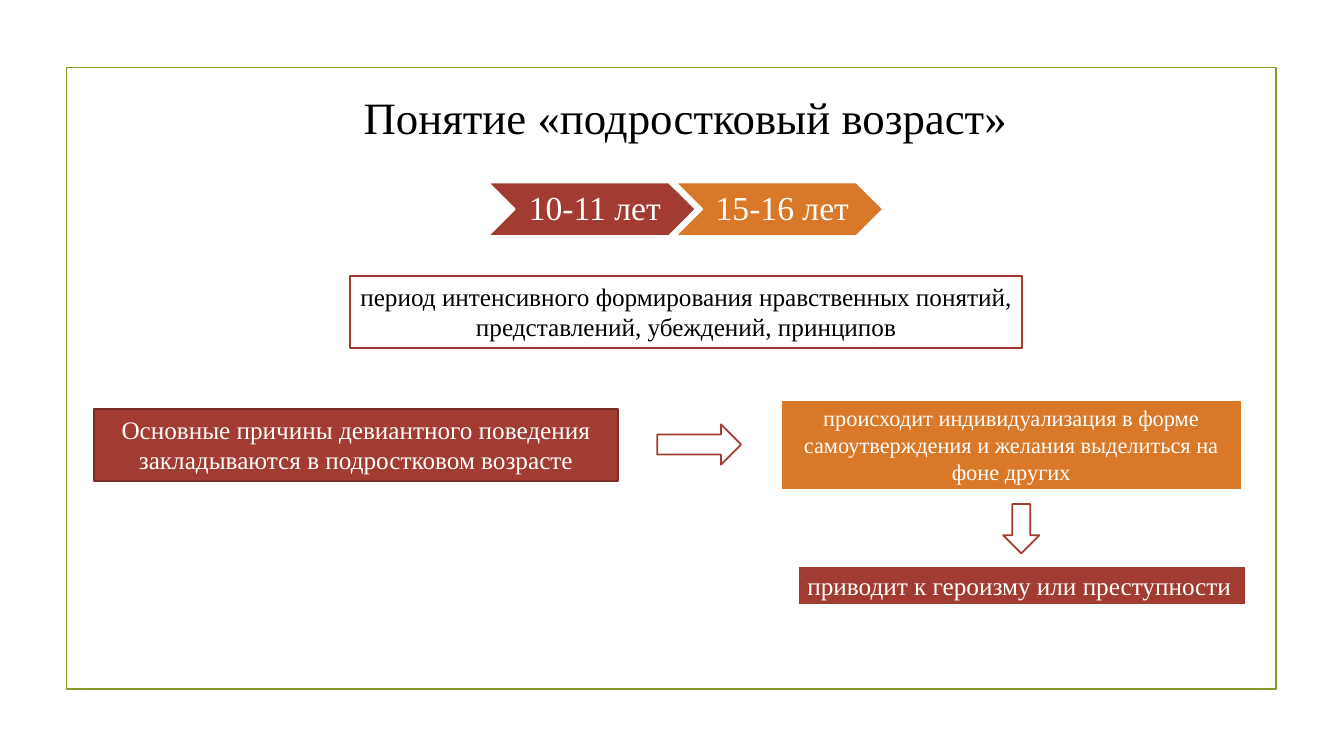
from dataclasses import dataclass
from pptx import Presentation
from pptx.dml.color import RGBColor
from pptx.enum.shapes import MSO_SHAPE
from pptx.enum.text import MSO_ANCHOR, MSO_AUTO_SIZE, PP_ALIGN
from pptx.util import Inches, Pt

WIDE, HIGH = Inches(13.33), Inches(7.5)
FONT = "Times New Roman"
INK = {
    "white": "FFFFFF",
    "black": "000000",
    "red": "A23C33",
    "dark": "782C26",
    "orange": "D97828",
    "green": "83992A",
}


@dataclass
class Area:
    left: float
    top: float
    width: float
    height: float


@dataclass
class Item:
    area: Area
    kind: MSO_SHAPE = MSO_SHAPE.RECTANGLE
    fill: str = ""
    line: str = ""
    weight: float = 1.25
    text: str = ""
    size: int = 18
    color: str = "white"
    align: PP_ALIGN = PP_ALIGN.CENTER
    wrap: bool = True
    grow: bool = False
    inset: tuple[float, float, float, float] = (0.1, 0.05, 0.1, 0.05)
    pitch: float = 1.0


def tint(name: str) -> RGBColor:
    return RGBColor.from_string(INK[name])


def place(area: Area) -> tuple[int, int, int, int]:
    return (
        round(WIDE * area.left / 100),
        round(HIGH * area.top / 100),
        round(WIDE * area.width / 100),
        round(HIGH * area.height / 100),
    )


def write(shape, item: Item) -> None:
    frame = shape.text_frame
    frame.word_wrap = item.wrap
    frame.vertical_anchor = MSO_ANCHOR.MIDDLE if not item.grow else MSO_ANCHOR.TOP
    if item.grow:
        frame.auto_size = MSO_AUTO_SIZE.SHAPE_TO_FIT_TEXT
    left, top, right, low = map(Inches, item.inset)
    frame.margin_left, frame.margin_top = left, top
    frame.margin_right, frame.margin_bottom = right, low
    para = frame.paragraphs[0]
    para.alignment = item.align
    para.line_spacing = item.pitch
    run = para.add_run()
    run.text = item.text
    run.font.name = FONT
    run.font.size = Pt(item.size)
    run.font.color.rgb = tint(item.color)


def draw(slide, item: Item) -> None:
    shape = slide.shapes.add_shape(item.kind, *place(item.area))
    shape.shadow.inherit = False
    if item.fill:
        shape.fill.solid()
        shape.fill.fore_color.rgb = tint(item.fill)
    else:
        shape.fill.background()
    shape.line.color.rgb = tint(item.line)
    shape.line.width = Pt(item.weight)
    if item.text:
        write(shape, item)


def ages() -> list[Item]:
    steps = [("10-11 лет", "red"), ("15-16 лет", "orange")]
    return [
        Item(Area(36.31 + 13.95 * num, 24.13, 15.45, 7.07), MSO_SHAPE.CHEVRON,
             fill, "white", text=text, size=24,
             inset=(0.1, 0.04, 0.04, 0.04), pitch=0.9)
        for num, (text, fill) in enumerate(steps)
    ]


def main() -> None:
    deck = Presentation()
    deck.slide_width, deck.slide_height = WIDE, HIGH
    slide = deck.slides.add_slide(deck.slide_layouts[6])

    draw(slide, Item(Area(4.95, 8.93, 90.02, 82.27), line="green"))

    title = Item(Area(24.08, 11.33, 53.86, 8.13), size=32, color="black",
                 text="Понятие «подростковый возраст»")
    write(slide.shapes.add_textbox(*place(title.area)), title)

    items = ages() + [
        Item(Area(26.03, 36.53, 50.04, 9.47), fill="white", line="red",
             color="black", grow=True,
             text="период интенсивного формирования нравственных понятий, "
                  "представлений, убеждений, принципов"),
        Item(Area(6.98, 54.13, 39.01, 9.47), fill="red", line="dark", grow=True,
             text="Основные причины девиантного поведения "
                  "закладываются в подростковом возрасте"),
        Item(Area(58.06, 52.8, 34.36, 12.13), fill="orange", line="white",
             weight=2, size=16, grow=True,
             text="происходит индивидуализация в форме самоутверждения "
                  "и желания выделиться на фоне других"),
        Item(Area(48.91, 56.13, 6.23, 5.33), MSO_SHAPE.RIGHT_ARROW,
             "white", "red"),
        Item(Area(59.34, 74.8, 33.38, 5.33), fill="red", line="white",
             weight=2, align=PP_ALIGN.LEFT, wrap=False, grow=True,
             text="приводит к героизму или преступности"),
        Item(Area(74.64, 66.67, 2.7, 6.53), MSO_SHAPE.DOWN_ARROW,
             "white", "red"),
    ]
    for item in items:
        draw(slide, item)
    deck.save("out.pptx")


if __name__ == "__main__":
    main()
